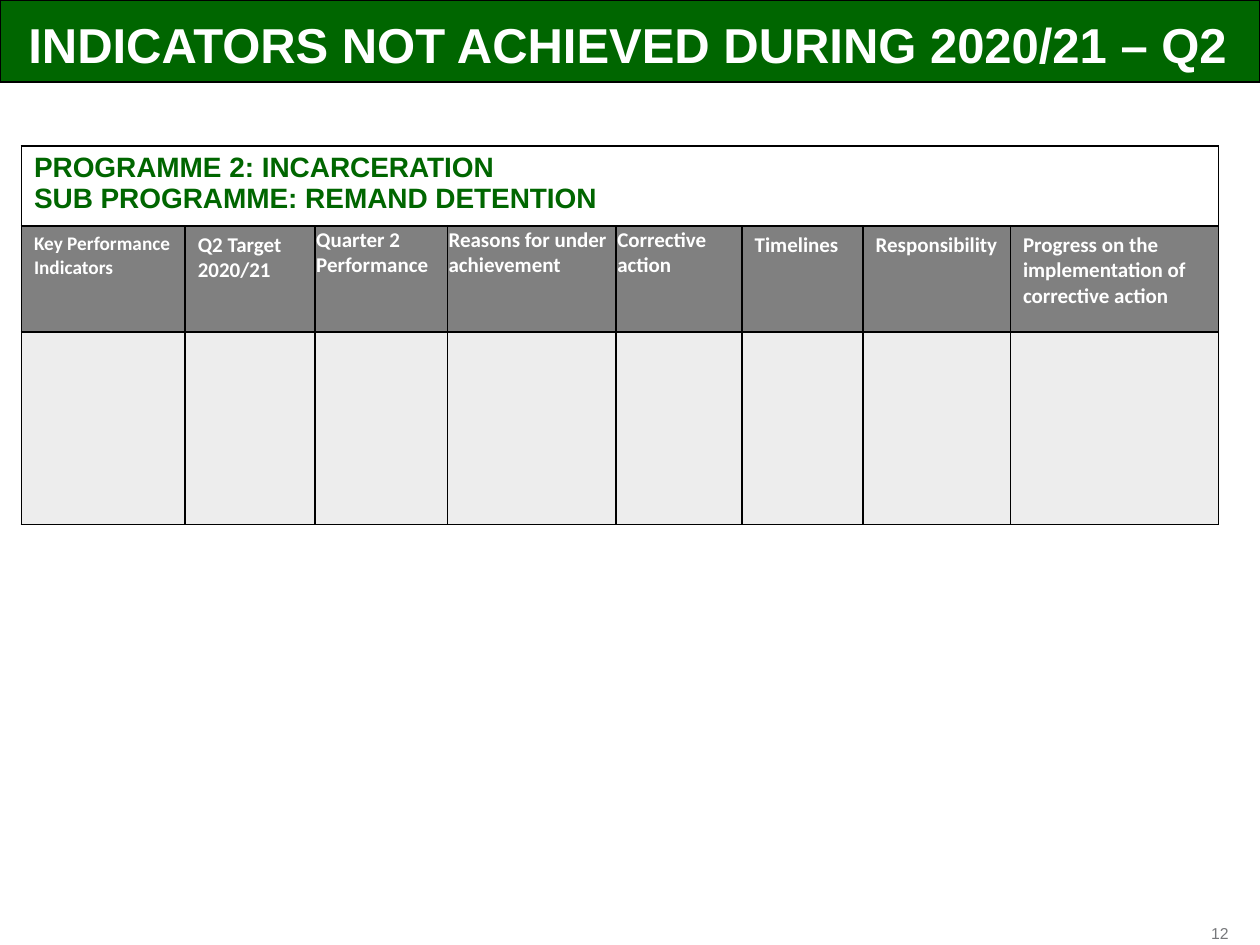
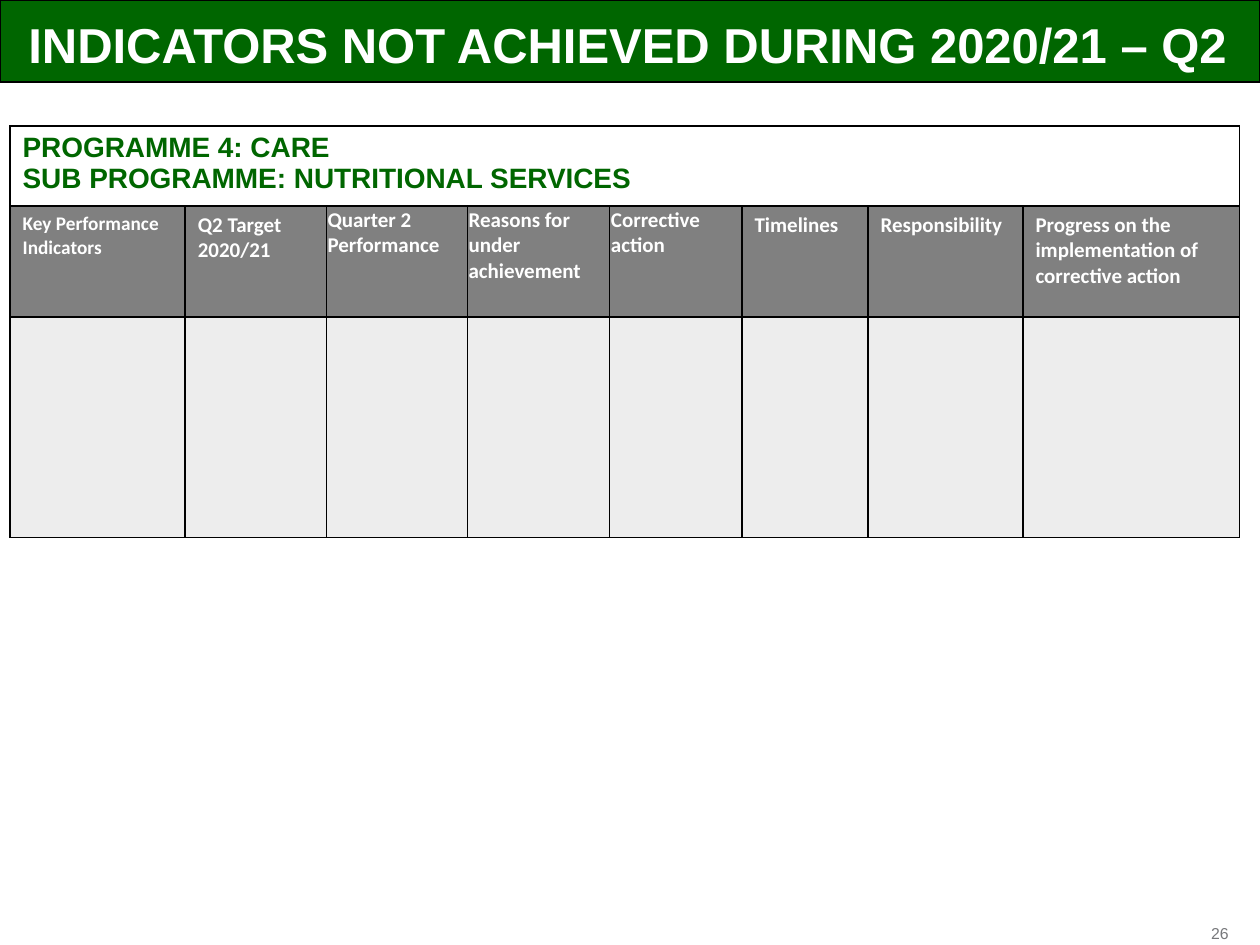
from dataclasses import dataclass

from lxml.etree import SubElement as Sub
from pptx import Presentation as Deck
from pptx.dml.color import RGBColor as Rgb
from pptx.enum.shapes import MSO_SHAPE as Form
from pptx.enum.text import MSO_ANCHOR as Anchor, PP_ALIGN as Align
from pptx.oxml.ns import qn
from pptx.util import Inches, Pt

COLS, ROWS = 100, 75


@dataclass(frozen=True)
class Theme:
    green: str = "006600"
    black: str = "000000"
    white: str = "FFFFFF"
    grey: str = "808080"
    pale: str = "EDEDED"
    note: str = "77787B"
    sans: str = "Arial"
    text: str = "Calibri"
    title: int = 28
    group: int = 16
    head: int = 12
    small: int = 11
    page: int = 9
    rule: int = 1
    wide: tuple = (0.1, 0.05, 0.1, 0.05)
    tight: tuple = (0.01, 0.01, 0.01, 0)


TITLE = "INDICATORS NOT ACHIEVED DURING 2020/21 – Q2"
THEME = Theme()
# Label, type size and cell margins of each column
HEADS = [
    ("Key Performance Indicators", THEME.small, THEME.wide),
    ("Q2 Target 2020/21", THEME.head, THEME.wide),
    ("Quarter 2\nPerformance", THEME.head, THEME.tight),
    ("Reasons for under achievement", THEME.head, THEME.tight),
    ("Corrective action", THEME.head, THEME.tight),
    ("Timelines", THEME.head, THEME.wide),
    ("Responsibility", THEME.head, THEME.wide),
    ("Progress on the implementation of corrective action",
     THEME.head, THEME.wide),
]
# Page, table corner, column widths, row heights, group lines (grid units)
PAGES = [
    (12, (1.7, 11.6),
     (13, 10.3, 10.5, 13.4, 10, 9.6, 11.7, 16.5), (6.35, 8.4, 15.3),
     ("PROGRAMME 2: INCARCERATION", "SUB PROGRAMME: REMAND DETENTION")),
    (26, (0.8, 10),
     (13.9, 11.2, 11.2, 11.3, 10.5, 10, 12.3, 17.2), (6.35, 8.8, 17.5),
     ("PROGRAMME 4: CARE", "SUB PROGRAMME: NUTRITIONAL SERVICES")),
]


class Board:
    def __init__(self, theme):
        self.theme = theme
        self.deck = Deck()
        self.deck.slide_width = Inches(10)
        self.deck.slide_height = Inches(7.5)
        self.slide = None

    def start(self):
        self.slide = self.deck.slides.add_slide(self.deck.slide_layouts[6])

    def span(self, cols):
        return round(self.deck.slide_width * cols / COLS)

    def drop(self, rows):
        return round(self.deck.slide_height * rows / ROWS)

    def place(self, left, top, width, height):
        return (self.span(left), self.drop(top),
                self.span(width), self.drop(height))

    def letter(self, frame, lines, size, color, face, bold=False,
               align=Align.LEFT, pitch=None):
        """Fill a text frame with one paragraph a line, all in one style."""
        for n, line in enumerate(lines):
            para = frame.paragraphs[0] if n == 0 else frame.add_paragraph()
            para.text = line
            para.alignment = align
            para.line_spacing = pitch
            font = para.font
            font.size, font.name, font.bold = Pt(size), face, bold
            font.color.rgb = Rgb.from_string(color)

    def inset(self, box, sides):
        """Set the margins of a cell or text frame, in inches from the left clockwise."""
        (box.margin_left, box.margin_top,
         box.margin_right, box.margin_bottom) = map(Inches, sides)

    def band(self, height):
        bar = self.slide.shapes.add_shape(
            Form.RECTANGLE, *self.place(0, 0, COLS, height))
        bar.shadow.inherit = False
        bar.fill.solid()
        bar.fill.fore_color.rgb = Rgb.from_string(self.theme.green)
        bar.line.color.rgb = Rgb.from_string(self.theme.black)
        bar.line.width = Pt(self.theme.rule)

    def label(self, area, text, *style, anchor=Anchor.TOP, **look):
        box = self.slide.shapes.add_textbox(*self.place(*area))
        frame = box.text_frame
        frame.word_wrap = True
        frame.vertical_anchor = anchor
        self.inset(frame, (0, 0, 0, 0))
        self.letter(frame, [text], *style, **look)

    def edge(self, cell):
        """Rule all four sides of a cell; must come before its fill."""
        props = cell._tc.get_or_add_tcPr()
        for side in ("a:lnL", "a:lnR", "a:lnT", "a:lnB"):
            line = Sub(props, qn(side), w=str(Pt(self.theme.rule)))
            fill = Sub(line, qn("a:solidFill"))
            Sub(fill, qn("a:srgbClr"), val=self.theme.black)

    def table(self, corner, widths, heights, group):
        look = self.theme
        area = self.place(*corner, sum(widths), sum(heights))
        grid = self.slide.shapes.add_table(
            len(heights), len(widths), *area).table
        grid.first_row = grid.horz_banding = False
        for col, width in zip(grid.columns, widths):
            col.width = self.span(width)
        for row, height, fill in zip(grid.rows, heights,
                                     (look.white, look.grey, look.pale)):
            row.height = self.drop(height)
            for cell in row.cells:
                self.edge(cell)
                cell.fill.solid()
                cell.fill.fore_color.rgb = Rgb.from_string(fill)
        top = grid.cell(0, 0)
        top.merge(grid.cell(0, len(widths) - 1))
        self.inset(top, look.wide)
        self.letter(top.text_frame, group, look.group, look.green,
                    look.sans, bold=True)
        for cell, (text, size, sides) in zip(grid.rows[1].cells, HEADS):
            self.inset(cell, sides)
            self.letter(cell.text_frame, [text], size, look.white,
                        look.text, bold=True)

    def frame(self, page):
        """Draw what every slide shares: band, title and page number."""
        look = self.theme
        self.band(6.5)
        self.label((94.6, 73.3, 2.9, 1.5), str(page), look.page, look.note,
                   look.sans, align=Align.RIGHT, anchor=Anchor.MIDDLE)
        self.label((0, 1.7, 99.6, 4.2), TITLE, look.title, look.white,
                   look.sans, bold=True, align=Align.CENTER, pitch=0.9)


def main():
    board = Board(THEME)
    for page, *table in PAGES:
        board.start()
        board.frame(page)
        board.table(*table)
    board.deck.save("out.pptx")


if __name__ == "__main__":
    main()
